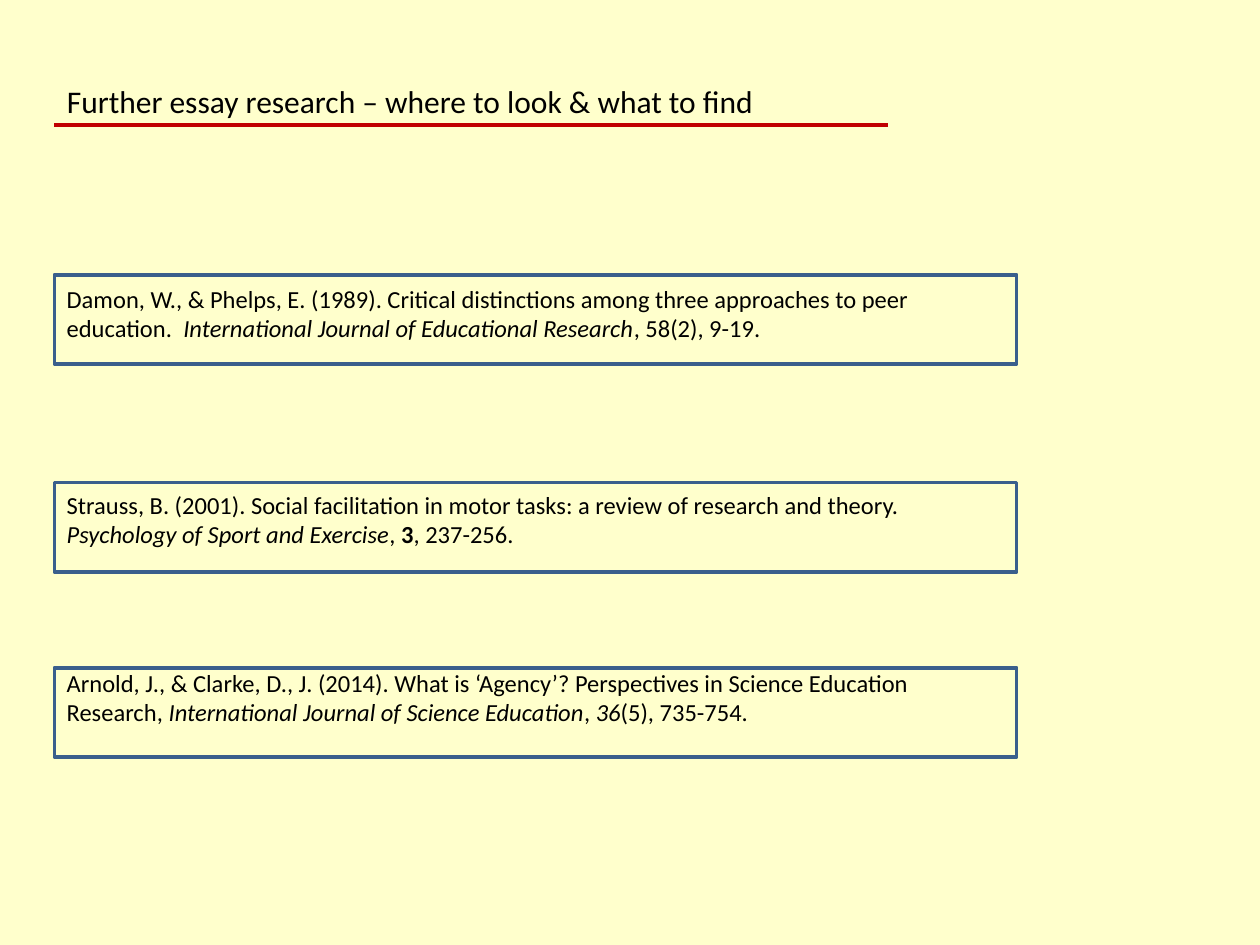
from dataclasses import dataclass

from lxml.etree import SubElement
from pptx import Presentation
from pptx.dml.color import RGBColor
from pptx.enum.shapes import MSO_CONNECTOR, MSO_SHAPE
from pptx.enum.text import MSO_ANCHOR, MSO_AUTO_SIZE, PP_ALIGN
from pptx.oxml.ns import qn
from pptx.util import Pt


@dataclass(frozen=True)
class Theme:
    font: str = "Calibri"
    background: RGBColor = RGBColor(0xFF, 0xFF, 0xCC)
    text: RGBColor = RGBColor(0, 0, 0)
    rule: RGBColor = RGBColor(0xC0, 0, 0)
    border: RGBColor = RGBColor(0x3A, 0x5F, 0x8C)
    title_size: int = 18
    body_size: int = 14
    line_width: int = 2


THEME = Theme()
LEFT = 31
BOX_WIDTH, BOX_HEIGHT = 550, 51

# Each reference: box top, text inset from the top, spans of (text, format)
REFERENCES = [
    (157, 5, [
        ("Damon, W., & Phelps, E. (1989). Critical distinctions among three "
         "approaches to peer education.  ", {}),
        ("International Journal of Educational Research", {"italic": True}),
        (", 58(2), 9-19.", {}),
    ]),
    (275.8, 4, [
        ("Strauss, B. (2001). Social facilitation in motor tasks: a review of "
         "research and theory. ", {}),
        ("Psychology of Sport and Exercise", {"italic": True}),
        (", ", {}),
        ("3", {"bold": True}),
        (", 237-256.", {}),
    ]),
    (381.6, 0, [
        ("Arnold, J., & Clarke, D., J. (2014). What is ‘Agency’? Perspectives "
         "in Science Education Research, ", {}),
        ("International Journal of Science Education", {"italic": True}),
        (", ", {}),
        ("36", {"italic": True}),
        ("(5), 735-754.", {}),
    ]),
]


def add_span(para, text, size=THEME.body_size, bold=False, italic=False):
    span = para.add_run()
    span.text = text
    span.font.name = THEME.font
    span.font.size = Pt(size)
    span.font.bold = bold
    span.font.italic = italic
    span.font.color.rgb = THEME.text


def set_frame(frame, top=3.6, right=7.2):
    """Wrap and top-align the frame, and return its left-aligned paragraph."""
    frame.word_wrap = True
    frame.auto_size = MSO_AUTO_SIZE.NONE
    frame.vertical_anchor = MSO_ANCHOR.TOP
    frame.margin_left, frame.margin_right = Pt(7.2), Pt(right)
    frame.margin_top, frame.margin_bottom = Pt(top), Pt(0)
    para = frame.paragraphs[0]
    para.alignment = PP_ALIGN.LEFT
    para.line_spacing = 1.0
    para.space_before = Pt(0)
    return para


def set_title(page, text):
    title = page.shapes.title
    title.left, title.top = Pt(LEFT), Pt(43.2)
    title.width, title.height = Pt(533), Pt(28)
    add_span(set_frame(title.text_frame), text, size=THEME.title_size)


def add_rule(page, top, width):
    rule = page.shapes.add_connector(
        MSO_CONNECTOR.STRAIGHT, Pt(LEFT), Pt(top), Pt(LEFT + width), Pt(top))
    rule.line.color.rgb = THEME.rule
    rule.line.width = Pt(THEME.line_width)
    SubElement(rule._element.spPr, qn("a:effectLst"))


def add_reference(page, top, inset, spans):
    box = page.shapes.add_shape(
        MSO_SHAPE.RECTANGLE, Pt(LEFT), Pt(top), Pt(BOX_WIDTH), Pt(BOX_HEIGHT))
    box.shadow.inherit = False
    box.fill.background()
    box.line.color.rgb = THEME.border
    box.line.width = Pt(THEME.line_width)
    para = set_frame(box.text_frame, top=inset, right=24.5)
    for text, style in spans:
        add_span(para, text, **style)


def main():
    deck = Presentation()
    deck.slide_width, deck.slide_height = Pt(720), Pt(540)
    page = deck.slides.add_slide(deck.slide_layouts[5])
    page.background.fill.solid()
    page.background.fill.fore_color.rgb = THEME.background

    # Heading with its underline
    set_title(page, "Further essay research – where to look & what to find")
    add_rule(page, top=71.3, width=476.6)

    # Framed references
    for top, inset, spans in REFERENCES:
        add_reference(page, top, inset, spans)

    deck.save("out.pptx")


if __name__ == "__main__":
    main()
